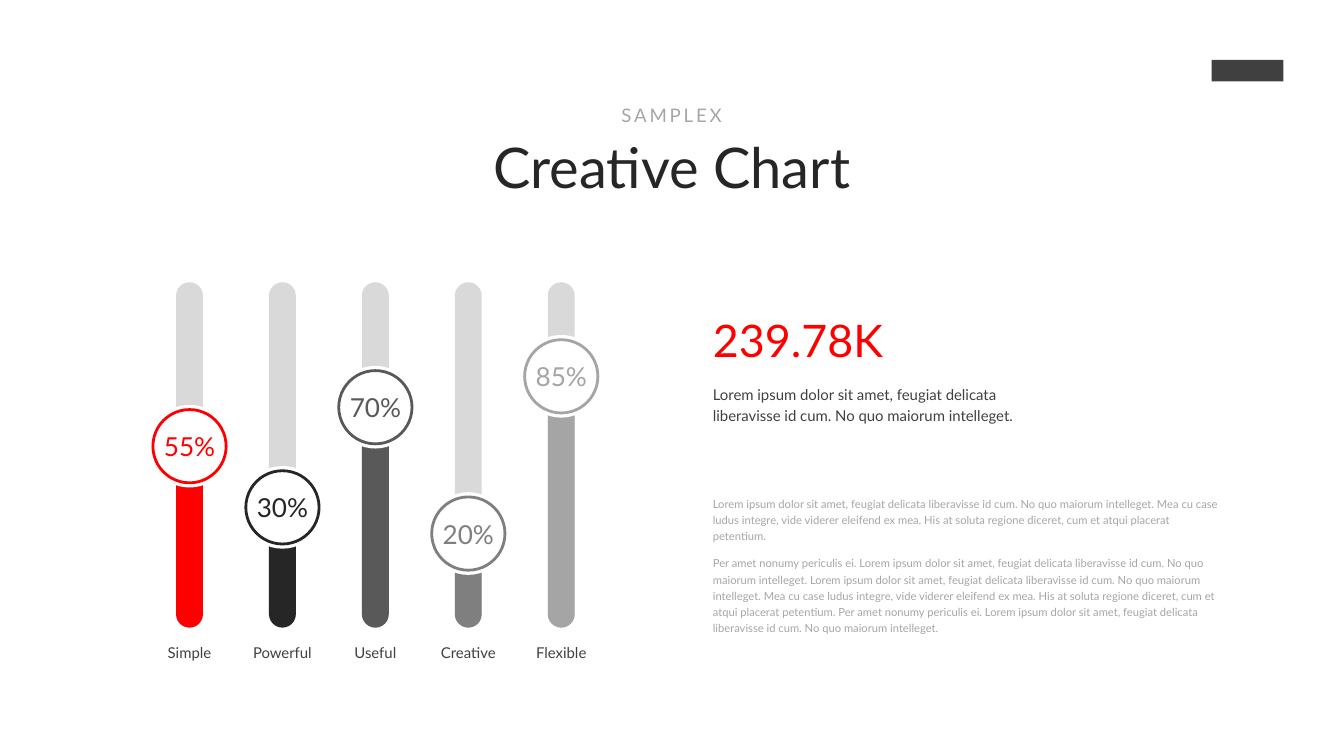
from pptx import Presentation
from pptx.dml.color import RGBColor
from pptx.enum.shapes import MSO_SHAPE as Shape
from pptx.enum.text import PP_ALIGN as Align
from pptx.util import Inches, Pt

RED = RGBColor(0xFF, 0x00, 0x00)
BLACK = RGBColor(0x26, 0x26, 0x26)
CHARCOAL = RGBColor(0x40, 0x40, 0x40)
DARK_GREY = RGBColor(0x59, 0x59, 0x59)
MID_GREY = RGBColor(0x7F, 0x7F, 0x7F)
SOFT_GREY = RGBColor(0xA5, 0xA5, 0xA5)
TEXT_GREY = RGBColor(0xA6, 0xA6, 0xA6)
TRACK_GREY = RGBColor(0xD9, 0xD9, 0xD9)
WHITE = RGBColor(0xFF, 0xFF, 0xFF)

SLIDERS = [
    ("Simple", "55%", 2.87, RED),
    ("Powerful", "30%", 1.96, BLACK),
    ("Useful", "70%", 3.45, DARK_GREY),
    ("Creative", "20%", 1.57, MID_GREY),
    ("Flexible", "85%", 3.91, SOFT_GREY),
]
FIRST_CENTER, PITCH = 2.82, 1.383
TRACK_BOTTOM, TRACK_HEIGHT, TRACK_WIDTH = 9.34, 5.14, 0.4
KNOB_DROP, DISC, RING = 0.17, 1.23, 1.09

SUMMARY = ("Lorem ipsum dolor sit amet, feugiat delicata liberavisse id cum. "
           "No quo maiorum intelleget.")
DETAILS = [
    "Lorem ipsum dolor sit amet, feugiat delicata liberavisse id cum. No quo maiorum "
    "intelleget. Mea cu case ludus integre, vide viderer eleifend ex mea. His at soluta "
    "regione diceret, cum et atqui placerat petentium.",
    "Per amet nonumy periculis ei. Lorem ipsum dolor sit amet, feugiat delicata liberavisse "
    "id cum. No quo maiorum intelleget. Lorem ipsum dolor sit amet, feugiat delicata "
    "liberavisse id cum. No quo maiorum intelleget. Mea cu case ludus integre, vide viderer "
    "eleifend ex mea. His at soluta regione diceret, cum et atqui placerat petentium. Per "
    "amet nonumy periculis ei. Lorem ipsum dolor sit amet, feugiat delicata liberavisse id "
    "cum. No quo maiorum intelleget.",
]


class SlidePainter:
    """Draws styled elements on the current slide."""

    font = "Lato"

    def __init__(self, slide):
        self.slide = slide

    def shape(self, kind, left, top, width, height, fill=None, line=None):
        shape = self.slide.shapes.add_shape(
            kind, Inches(left), Inches(top), Inches(width), Inches(height))
        shape.shadow.inherit = False
        if fill is None:
            shape.fill.background()
        else:
            shape.fill.solid()
            shape.fill.fore_color.rgb = fill
        if line is None:
            shape.line.fill.background()
        else:
            shape.line.color.rgb = line
            shape.line.width = Pt(3)
        return shape

    def bar(self, center, height, color):
        bar = self.shape(Shape.ROUNDED_RECTANGLE, center - TRACK_WIDTH / 2,
                         TRACK_BOTTOM - height, TRACK_WIDTH, height, color)
        bar.adjustments[0] = 0.5

    def circle(self, center, middle, size, fill=None, line=None):
        self.shape(Shape.OVAL, center - size / 2, middle - size / 2, size, size, fill, line)

    def text(self, left, top, width, height, lines, align=Align.LEFT, spacing=1.0):
        box = self.slide.shapes.add_textbox(
            Inches(left), Inches(top), Inches(width), Inches(height))
        frame = box.text_frame
        frame.word_wrap = True
        frame.text = "\n".join(line[0] for line in lines)
        for paragraph, (_, size, color, before) in zip(frame.paragraphs, lines):
            paragraph.alignment = align
            paragraph.line_spacing = spacing
            paragraph.space_before = Pt(before)
            font = paragraph.runs[0].font
            font.name = self.font
            font.size = Pt(size)
            font.color.rgb = color
        return frame

    def knob(self, center, middle, value, color):
        self.circle(center, middle, DISC, fill=WHITE)
        self.circle(center, middle, RING, line=color)
        self.text(center - 0.5, middle - 0.28, 1, 0.57, [(value, 28, color, 0)], Align.CENTER)


def main():
    deck = Presentation()
    deck.slide_width, deck.slide_height = Inches(20), Inches(11.25)
    painter = SlidePainter(deck.slides.add_slide(deck.slide_layouts[6]))

    painter.shape(Shape.RECTANGLE, 18.03, 0.89, 1.07, 0.32, CHARCOAL)

    for index, (label, value, height, color) in enumerate(SLIDERS):
        center = FIRST_CENTER + index * PITCH
        painter.bar(center, TRACK_HEIGHT, TRACK_GREY)
        painter.bar(center, height, color)
        painter.knob(center, TRACK_BOTTOM - height + KNOB_DROP, value, color)
        painter.text(center - PITCH / 2, 9.53, PITCH, 0.37,
                     [(label, 16, CHARCOAL, 0)], Align.CENTER)

    painter.text(10.51, 7.31, 7.73, 2.19,
                 [(detail, 12, TEXT_GREY, 12) for detail in DETAILS], spacing=1.2)
    painter.text(10.51, 4.6, 3.69, 0.91, [("239.78K", 48, RED, 0)])
    painter.text(10.51, 5.63, 4.85, 1.07, [(SUMMARY, 16, CHARCOAL, 6)], spacing=1.2)

    heading = painter.text(5.97, 1.5, 8.05, 1.53,
                           [("SAMPLEX", 20, TEXT_GREY, 12), ("Creative Chart", 60, BLACK, 6)],
                           Align.CENTER)
    heading.paragraphs[0].runs[0].font._element.set("spc", "300")

    deck.save("out.pptx")


if __name__ == "__main__":
    main()
